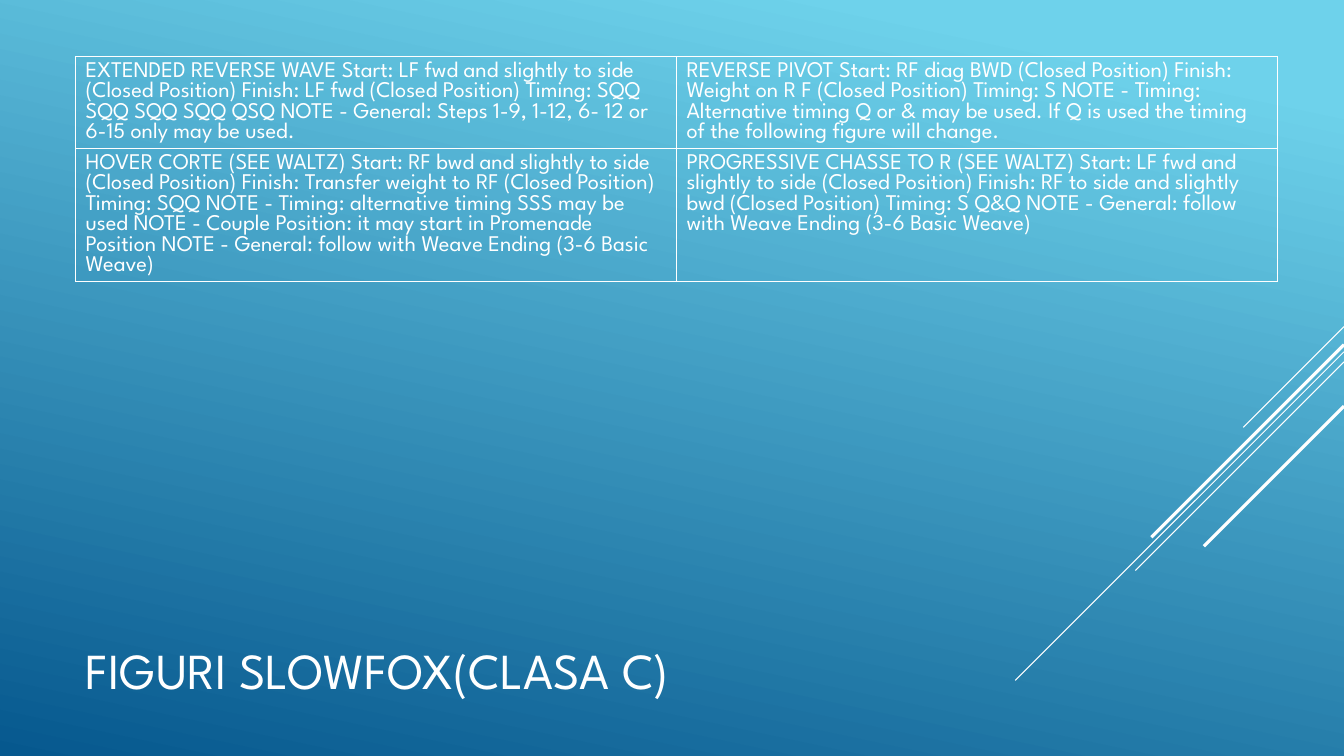
from dataclasses import dataclass

from lxml.etree import SubElement
from pptx import Presentation
from pptx.dml.color import RGBColor
from pptx.enum.shapes import MSO_CONNECTOR
from pptx.enum.text import MSO_ANCHOR, MSO_AUTO_SIZE, PP_ALIGN
from pptx.oxml.ns import qn
from pptx.util import Inches, Pt


@dataclass(frozen=True)
class Theme:
    font: str = "League Spartan"
    white: str = "FFFFFF"
    sky: str = "6ED2EB"
    deep_blue: str = "06588E"
    title_size: int = 36
    table_size: int = 16
    border_width: int = 1


class SlideBuilder:
    def __init__(self, slide, theme):
        self.slide = slide
        self.theme = theme

    def style(self, paragraph, size):
        paragraph.alignment = PP_ALIGN.LEFT
        paragraph.font.name = self.theme.font
        paragraph.font.size = Pt(size)
        paragraph.font.color.rgb = RGBColor.from_string(self.theme.white)

    def background(self):
        fill = self.slide.background.fill
        fill.gradient()
        fill.gradient_angle = 360 - 102
        stops = ((0.1, self.theme.sky), (1, self.theme.deep_blue))
        for stop, (position, color) in zip(fill.gradient_stops, stops):
            stop.position = position
            stop.color.rgb = RGBColor.from_string(color)

    def line(self, start, end, width):
        points = [Inches(value) for value in (*start, *end)]
        connector = self.slide.shapes.add_connector(MSO_CONNECTOR.STRAIGHT, *points)
        connector.line.color.rgb = RGBColor.from_string(self.theme.white)
        connector.line.width = Pt(width)
        SubElement(connector.element.spPr, qn("a:effectLst"))

    def title(self, text, left, top, width, height):
        title = self.slide.shapes.title
        title.left, title.top = Inches(left), Inches(top)
        title.width, title.height = Inches(width), Inches(height)
        frame = title.text_frame
        frame.text = text
        frame.word_wrap = True
        frame.auto_size = MSO_AUTO_SIZE.NONE
        frame.vertical_anchor = MSO_ANCHOR.MIDDLE
        self.style(frame.paragraphs[0], self.theme.title_size)

    def border(self, cell):
        properties = cell._tc.get_or_add_tcPr()
        for side in ("lnL", "lnR", "lnT", "lnB"):
            edge = SubElement(properties, qn(f"a:{side}"), w=str(Pt(self.theme.border_width)))
            fill = SubElement(edge, qn("a:solidFill"))
            SubElement(fill, qn("a:srgbClr"), val=self.theme.white)

    def table(self, rows, left, top, width, row_height):
        table = self.slide.shapes.add_table(
            len(rows), len(rows[0]), Inches(left), Inches(top),
            Inches(width), Inches(row_height * len(rows))).table
        table.first_row = False
        table.horz_banding = False
        for row_index, row in enumerate(rows):
            for column_index, text in enumerate(row):
                cell = table.cell(row_index, column_index)
                cell.text = text
                self.border(cell)
                cell.fill.background()
                self.style(cell.text_frame.paragraphs[0], self.theme.table_size)


FIGURES = [
    ["EXTENDED REVERSE WAVE Start: LF fwd and slightly to side (Closed Position) "
     "Finish: LF fwd (Closed Position) Timing: SQQ SQQ SQQ SQQ QSQ "
     "NOTE - General: Steps 1-9, 1-12, 6- 12 or 6-15 only may be used.",
     "REVERSE PIVOT Start: RF diag BWD (Closed Position) "
     "Finish: Weight on R F (Closed Position) Timing: S "
     "NOTE - Timing: Alternative timing Q or & may be used. "
     "If Q is used the timing of the following figure will change."],
    ["HOVER CORTE (SEE WALTZ) Start: RF bwd and slightly to side (Closed Position) "
     "Finish: Transfer weight to RF (Closed Position) Timing: SQQ "
     "NOTE - Timing: alternative timing SSS may be used "
     "NOTE - Couple Position: it may start in Promenade Position "
     "NOTE - General: follow with Weave Ending (3-6 Basic Weave)",
     "PROGRESSIVE CHASSE TO R (SEE WALTZ) Start: LF fwd and slightly to side "
     "(Closed Position) Finish: RF to side and slightly bwd (Closed Position) "
     "Timing: S Q&Q NOTE - General: follow with Weave Ending (3-6 Basic Weave)"],
]

# Each diagonal: height at the right edge, run to the lower left, line width
DIAGONALS = [(3.24, 1, 0.75), (3.49, 3.26, 0.75), (3.59, 2.07, 0.75),
             (3.42, 1.91, 2.25), (4.03, 1.39, 2.25)]
SLIDE_WIDTH = 13.33


def main():
    presentation = Presentation()
    presentation.slide_width = Inches(SLIDE_WIDTH)
    presentation.slide_height = Inches(7.5)
    slide = presentation.slides.add_slide(presentation.slide_layouts[5])
    builder = SlideBuilder(slide, Theme())

    # Backdrop
    builder.background()
    for top, run, width in DIAGONALS:
        builder.line((SLIDE_WIDTH, top), (SLIDE_WIDTH - run, top + run), width)

    # Title and figures
    builder.title("FIGURI SLOWFOX(CLASA C)", 0.75, 6.16, 9.33, 0.96)
    builder.table(FIGURES, 0.75, 0.56, 11.92, 0.41)

    presentation.save("out.pptx")


if __name__ == "__main__":
    main()
